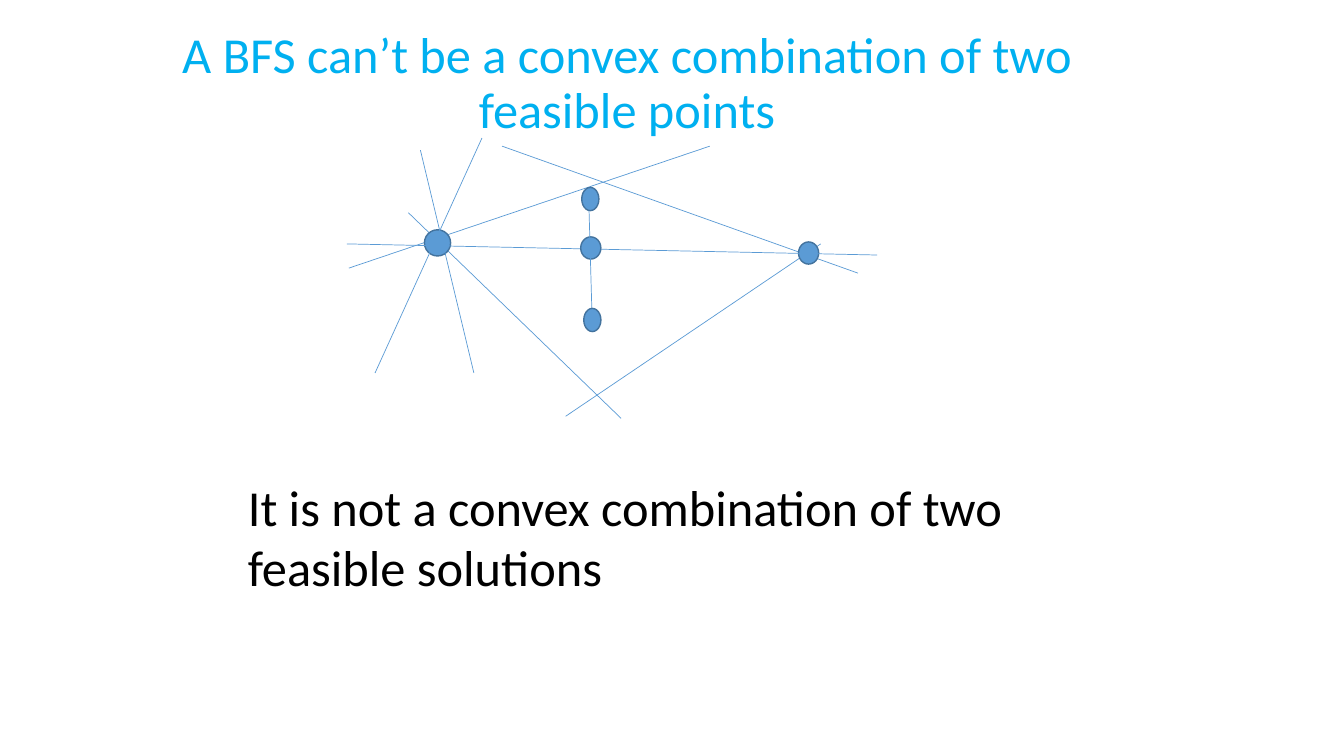
import dataclasses
import pptx
import pptx.util
import pptx.dml.color
import pptx.enum.shapes
import pptx.enum.text
import pptx.oxml
import pptx.oxml.ns

SCALE = 9144
BLUE = "5B9BD5"
EDGE = "43739E"


@dataclasses.dataclass
class Line:
    x1: int
    y1: int
    x2: int
    y2: int


@dataclasses.dataclass
class Dot:
    left: int
    top: int
    width: int
    height: int


FIGURE = [
    Line(346, 266, 704, 145),
    Line(498, 145, 851, 271),
    Line(405, 211, 616, 415),
    Line(561, 413, 814, 242),
    Dot(421, 228, 26, 26),
    Line(372, 370, 478, 137),
    Dot(792, 240, 20, 22),
    Line(344, 242, 870, 253),
    Dot(576, 235, 20, 22),
    Line(470, 370, 417, 149),
    Line(584, 200, 587, 306),
    Dot(579, 306, 17, 23),
    Dot(577, 186, 17, 23),
]


def px(count: int) -> int:
    return pptx.util.Emu(count * SCALE)


def color(code: str) -> pptx.dml.color.RGBColor:
    return pptx.dml.color.RGBColor.from_string(code)


def apply(target, values: dict) -> None:
    for name, value in values.items():
        setattr(target, name, value)


def draw_line(slide, line: Line) -> None:
    shape = slide.shapes.add_connector(
        pptx.enum.shapes.MSO_CONNECTOR.STRAIGHT,
        px(line.x1), px(line.y1), px(line.x2), px(line.y2))
    shape.line.color.rgb = color(BLUE)
    shape.line.width = pptx.util.Pt(0.5)
    props = shape._element.spPr
    props.append(pptx.oxml.parse_xml(
        f"<a:effectLst {pptx.oxml.ns.nsdecls('a')}/>"))


def draw_dot(slide, dot: Dot) -> None:
    shape = slide.shapes.add_shape(
        pptx.enum.shapes.MSO_SHAPE.OVAL,
        px(dot.left), px(dot.top), px(dot.width), px(dot.height))
    shape.shadow.inherit = False
    shape.fill.solid()
    shape.fill.fore_color.rgb = color(BLUE)
    shape.line.color.rgb = color(EDGE)
    shape.line.width = pptx.util.Pt(1)


def write(shape, text: str, code: str, frame: dict, para: dict) -> None:
    shape.text_frame.text = text
    apply(shape.text_frame, {"word_wrap": True, **frame})
    first = shape.text_frame.paragraphs[0]
    apply(first, para)
    apply(first.font, {"name": "Calibri", "size": pptx.util.Pt(36)})
    first.font.color.rgb = color(code)


def main() -> None:
    deck = pptx.Presentation()
    apply(deck, {"slide_width": px(1333), "slide_height": px(750)})
    slide = deck.slides.add_slide(deck.slide_layouts[5])

    title = slide.shapes.title
    apply(title, {"left": px(122), "top": px(25),
                  "width": px(1000), "height": px(68)})
    write(title, "A BFS can’t be a convex combination of two feasible points",
          "00B0F0",
          {"vertical_anchor": pptx.enum.text.MSO_ANCHOR.TOP,
           "auto_size": pptx.enum.text.MSO_AUTO_SIZE.NONE},
          {"alignment": pptx.enum.text.PP_ALIGN.CENTER, "line_spacing": 0.9})

    for item in FIGURE:
        if isinstance(item, Line):
            draw_line(slide, item)
        else:
            draw_dot(slide, item)

    note = slide.shapes.add_textbox(px(236), px(467), px(858), px(131))
    write(note, "It is not a convex combination of two feasible solutions",
          "000000",
          {"auto_size": pptx.enum.text.MSO_AUTO_SIZE.SHAPE_TO_FIT_TEXT},
          {"alignment": pptx.enum.text.PP_ALIGN.LEFT})

    deck.save("out.pptx")


if __name__ == "__main__":
    main()
